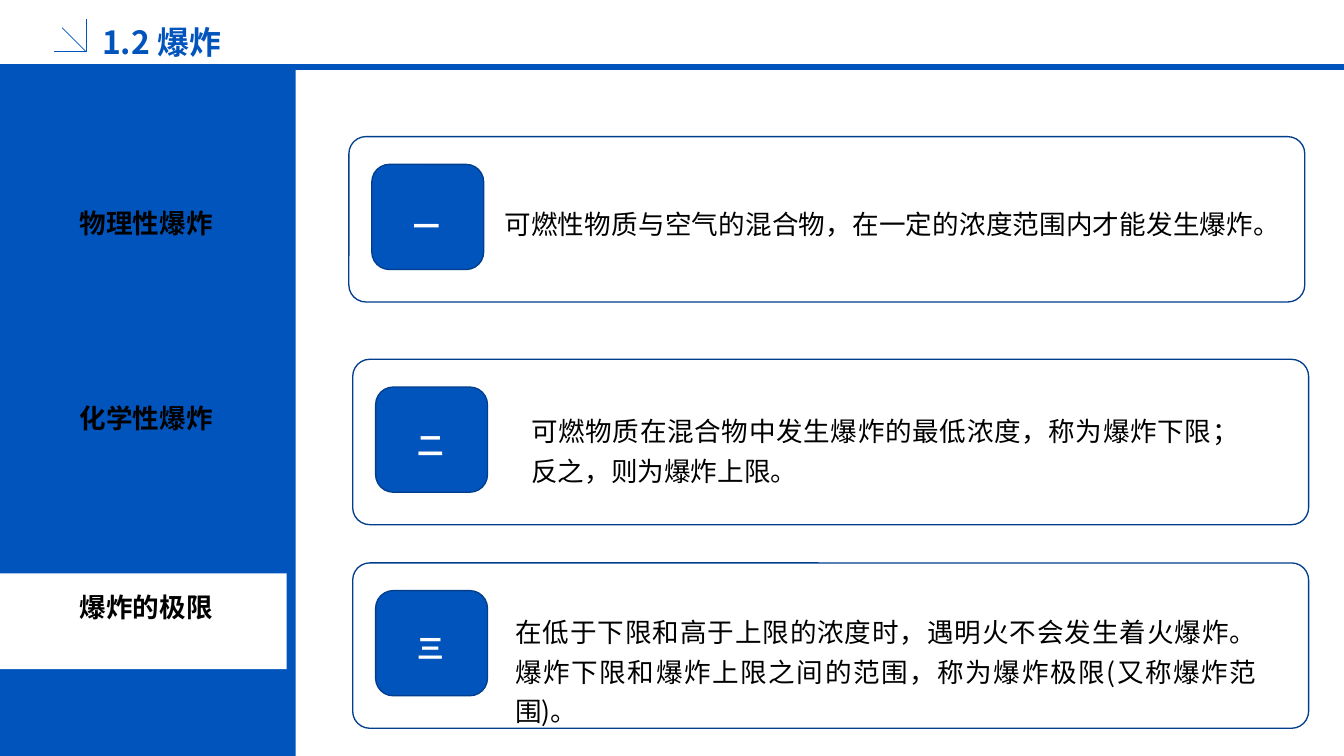
from pptx import Presentation
from pptx.dml.color import RGBColor
from pptx.enum.shapes import MSO_CONNECTOR, MSO_SHAPE
from pptx.enum.text import MSO_ANCHOR, MSO_AUTO_SIZE, PP_ALIGN
from pptx.util import Inches, Pt
from lxml.etree import SubElement
from pptx.oxml.ns import qn

BLUE = RGBColor(0x01, 0x54, 0xBC)
NAVY = RGBColor(0x01, 0x3E, 0x8B)
BLACK = RGBColor(0, 0, 0)
WHITE = RGBColor(0xFF, 0xFF, 0xFF)
CJK = "Noto Sans CJK SC"
W, H = 14.06, 7.91
SIDE_W, RULE_Y = 0.22 * W, 0.7

prs = Presentation()
prs.slide_width, prs.slide_height = Inches(W), Inches(H)
s = prs.slides.add_slide(prs.slide_layouts[6])


def add_box(kind, x, y, w, h, fill=None, line=None):
    sp = s.shapes.add_shape(kind, Inches(x), Inches(y), Inches(w), Inches(h))
    sp.shadow.inherit = False
    if fill is None:
        sp.fill.background()
    else:
        sp.fill.solid()
        sp.fill.fore_color.rgb = fill
    if line is None:
        sp.line.fill.background()
    else:
        sp.line.color.rgb = line
        sp.line.width = Pt(1)
    return sp


def add_text(text, x, y, w, h, color, align, spacing, grow=False, **font):
    tf = s.shapes.add_textbox(Inches(x), Inches(y), Inches(w), Inches(h)).text_frame
    tf.word_wrap = True
    if grow:
        tf.auto_size = MSO_AUTO_SIZE.SHAPE_TO_FIT_TEXT
    else:
        tf.vertical_anchor = MSO_ANCHOR.MIDDLE
    p = tf.paragraphs[0]
    p.alignment, p.line_spacing = align, spacing
    r = p.add_run()
    r.text = text
    for key, value in ({"size": Pt(20), "name": CJK} | font).items():
        setattr(r.font, key, value)
    r.font.color.rgb = color
    # East Asian typeface
    SubElement(r.font._element, qn("a:ea")).set("typeface", CJK)


# Header rule and corner mark
for x1, y1, x2, y2, width in [
    (0, RULE_Y, W, RULE_Y, 4.5),
    (0.57, 0.54, 0.9, 0.54, 0.5),
    (0.9, 0.54, 0.9, 0.2, 0.5),
    (0.9, 0.54, 0.65, 0.29, 0.5),
]:
    c = s.shapes.add_connector(MSO_CONNECTOR.STRAIGHT,
                               Inches(x1), Inches(y1), Inches(x2), Inches(y2))
    c.line.color.rgb = BLUE
    c.line.width = Pt(width)
    SubElement(c._element.spPr, qn("a:effectLst"))

add_text("1.2 爆炸", 0.97, 0.17, 3.15, 0.45, BLUE, PP_ALIGN.LEFT, 1.2,
         size=Pt(24), bold=True)

# Sidebar with the notched marker of the current topic
add_box(MSO_SHAPE.RECTANGLE, 0, 0.73, SIDE_W, H - 0.73, BLUE)
top, mid, bottom = 6.07, 6.35, 6.63
builder = s.shapes.build_freeform(0, top, scale=Inches(1))
builder.add_line_segments([(SIDE_W, top), (SIDE_W - 0.47, mid),
                           (SIDE_W, bottom), (0, bottom)])
marker = builder.convert_to_shape()
marker.shadow.inherit = False
marker.fill.solid()
marker.fill.fore_color.rgb = WHITE
marker.line.fill.background()

for topic, y in [("物理性爆炸", 2.06), ("化学性爆炸", 4.1), ("爆炸的极限", 6.08)]:
    add_text(topic, 0.35, y, 2.36, 0.47, BLACK, PP_ALIGN.CENTER, 1.2,
             name="Arial", bold=True)

# Cards: frame x, y; number and its y; statement and its x, y, width
cards = [
    (3.65, 1.43, "一", 2.06, 5.18, 2.04, 8.03,
     "可燃性物质与空气的混合物，在一定的浓度范围内才能发生爆炸。"),
    (3.69, 3.76, "二", 4.36, 5.46, 4.21, 7.6,
     "可燃物质在混合物中发生爆炸的最低浓度，称为爆炸下限；反之，则为爆炸上限。"),
    (3.69, 5.89, "三", 6.48, 5.29, 6.31, 7.95,
     "在低于下限和高于上限的浓度时，遇明火不会发生着火爆炸。"
     "爆炸下限和爆炸上限之间的范围，称为爆炸极限(又称爆炸范围)。"),
]
for x, y, number, number_y, text_x, text_y, text_w, statement in cards:
    frame = add_box(MSO_SHAPE.ROUNDED_RECTANGLE, x, y, 10, 1.73, line=NAVY)
    frame.adjustments[0] = 0.103
    add_box(MSO_SHAPE.ROUNDED_RECTANGLE, x + 0.24, y + 0.29, 1.17, 1.1, BLUE, NAVY)
    add_text(number, x + 0.35, number_y, 0.94, 0.48, WHITE, PP_ALIGN.CENTER, 1.25,
             grow=True, bold=True)
    add_text(statement, text_x, text_y, text_w, 0.9, BLACK, PP_ALIGN.JUSTIFY, 1.25,
             grow=True)

prs.save("out.pptx")
